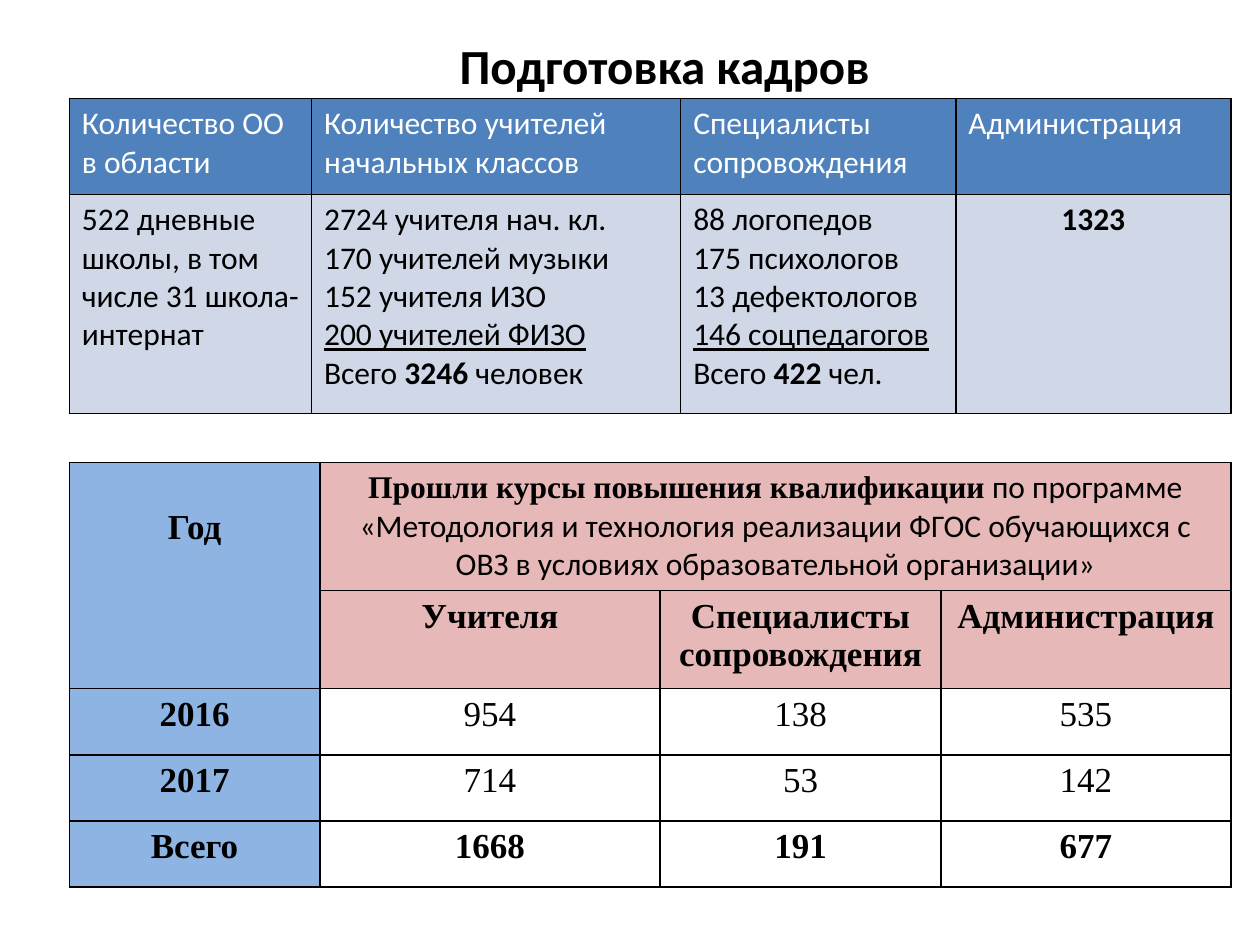
"""Build the staff training slide with its two tables."""
from dataclasses import dataclass

from lxml import etree
from pptx import Presentation
from pptx import util as u
from pptx.dml.color import RGBColor
from pptx.enum import text
from pptx.oxml.ns import qn


@dataclass(frozen=True)
class Theme:
    sans: str = "Calibri"
    serif: str = "Times New Roman"
    title_size: int = 28
    large_size: int = 20
    body_size: int = 18
    black: str = "000000"
    white: str = "FFFFFF"
    header: str = "4F81BD"
    body: str = "D0D8E8"
    year: str = "8EB4E3"
    courses: str = "E6B9B8"


@dataclass(frozen=True)
class Run:
    text: str
    font: str = Theme.sans
    size: int = Theme.body_size
    color: str = Theme.black
    bold: bool = False
    underline: bool = False


class SlideBuilder:
    def __init__(self, slide, theme):
        self.slide = slide
        self.theme = theme

    def fill_text(self, frame, lines, centered=False):
        frame.word_wrap = True
        frame.text = "\n".join("" for _ in lines)
        for paragraph, runs in zip(frame.paragraphs, lines):
            paragraph.alignment = text.PP_ALIGN.CENTER if centered else text.PP_ALIGN.LEFT
            for item in runs:
                run = paragraph.add_run()
                run.text = item.text
                run.font.name = item.font
                run.font.size = u.Pt(item.size)
                run.font.bold = item.bold
                run.font.underline = item.underline
                run.font.color.rgb = RGBColor.from_string(item.color)

    def title(self, left, top, width, height, words):
        shape = self.slide.shapes.add_textbox(*map(u.Pt, (left, top, width, height)))
        run = Run(words, size=self.theme.title_size, bold=True)
        self.fill_text(shape.text_frame, [[run]], centered=True)

    def table(self, left, top, columns, rows):
        frame = self.slide.shapes.add_table(
            len(rows), len(columns),
            *map(u.Pt, (left, top, sum(columns), sum(rows))))
        table = frame.table
        for column, width in zip(table.columns, columns):
            column.width = u.Pt(width)
        for row, height in zip(table.rows, rows):
            row.height = u.Pt(height)
        for cell in table.iter_cells():
            self.border(cell)
            cell.fill.background()
        return table

    def border(self, cell):
        properties = cell._tc.get_or_add_tcPr()
        for side in ("a:lnL", "a:lnR", "a:lnT", "a:lnB"):
            line = etree.SubElement(properties, qn(side), w=str(u.Pt(1)))
            fill = etree.SubElement(line, qn("a:solidFill"))
            etree.SubElement(fill, qn("a:srgbClr"), val=self.theme.black)

    def cell(self, cell, lines, color=None, centered=False):
        if color:
            cell.fill.solid()
            cell.fill.fore_color.rgb = RGBColor.from_string(color)
        self.fill_text(cell.text_frame, lines, centered)


def staff_lines(groups, total, unit):
    lines = [[Run(group)] for group in groups[:-1]]
    lines.append([Run(groups[-1], underline=True)])
    lines.append([Run("Всего "), Run(total, bold=True), Run(f" {unit}")])
    return lines


def add_staff_table(builder, left):
    theme = builder.theme
    table = builder.table(left, 56.2, [138.4, 211, 157.2, 157.2], [54.8, 125.2])
    headings = ["Количество ОО в области", "Количество учителей начальных классов",
                "Специалисты сопровождения", "Администрация"]
    details = [
        [[Run("522 дневные школы, в том числе 31 школа-интернат")]],
        staff_lines(["2724 учителя нач. кл.", "170 учителей музыки",
                     "152 учителя ИЗО", "200 учителей ФИЗО"], "3246", "человек"),
        staff_lines(["88 логопедов", "175 психологов",
                     "13 дефектологов", "146 соцпедагогов"], "422", "чел."),
        [[Run("1323", bold=True)]],
    ]
    for column, (heading, lines) in enumerate(zip(headings, details)):
        builder.cell(table.cell(0, column), [[Run(heading, color=theme.white)]], theme.header)
        builder.cell(table.cell(1, column), lines, theme.body, centered=column == 3)


def add_course_table(builder, left):
    theme = builder.theme
    table = builder.table(left, 264.2, [143.2, 194.4, 160.6, 165.6],
                          [73.2, 56.2, 37.8, 37.8, 37.8])

    def put(row, column, words, color=None, bold=True):
        run = Run(words, theme.serif, theme.large_size, bold=bold)
        builder.cell(table.cell(row, column), [[run]], color, centered=True)

    table.cell(0, 0).merge(table.cell(1, 0))
    table.cell(0, 1).merge(table.cell(0, 3))
    put(0, 0, "Год", theme.year)
    table.cell(0, 0).margin_top = u.Pt(26.4)
    builder.cell(table.cell(0, 1), [[
        Run("Прошли курсы повышения квалификации", theme.serif, bold=True),
        Run(" по программе «Методология и технология реализации ФГОС "
            "обучающихся с ОВЗ в условиях образовательной организации»"),
    ]], theme.courses, centered=True)
    headings = ["Учителя", "Специалисты сопровождения", "Администрация"]
    for column, heading in enumerate(headings, 1):
        put(1, column, heading, theme.courses)
    results = [("2016", 954, 138, 535), ("2017", 714, 53, 142), ("Всего", 1668, 191, 677)]
    for row, (year, *counts) in enumerate(results, 2):
        put(row, 0, year, theme.year)
        for column, count in enumerate(counts, 1):
            put(row, column, str(count), bold=year == "Всего")


def main():
    presentation = Presentation()
    presentation.slide_width, presentation.slide_height = u.Pt(720), u.Pt(540)
    slide = presentation.slides.add_slide(presentation.slide_layouts[6])
    builder = SlideBuilder(slide, Theme())
    left = 39.6
    builder.title(100, 16.6, 559.4, 41, "Подготовка кадров")
    add_course_table(builder, left)
    add_staff_table(builder, left)
    presentation.save("out.pptx")


if __name__ == "__main__":
    main()
